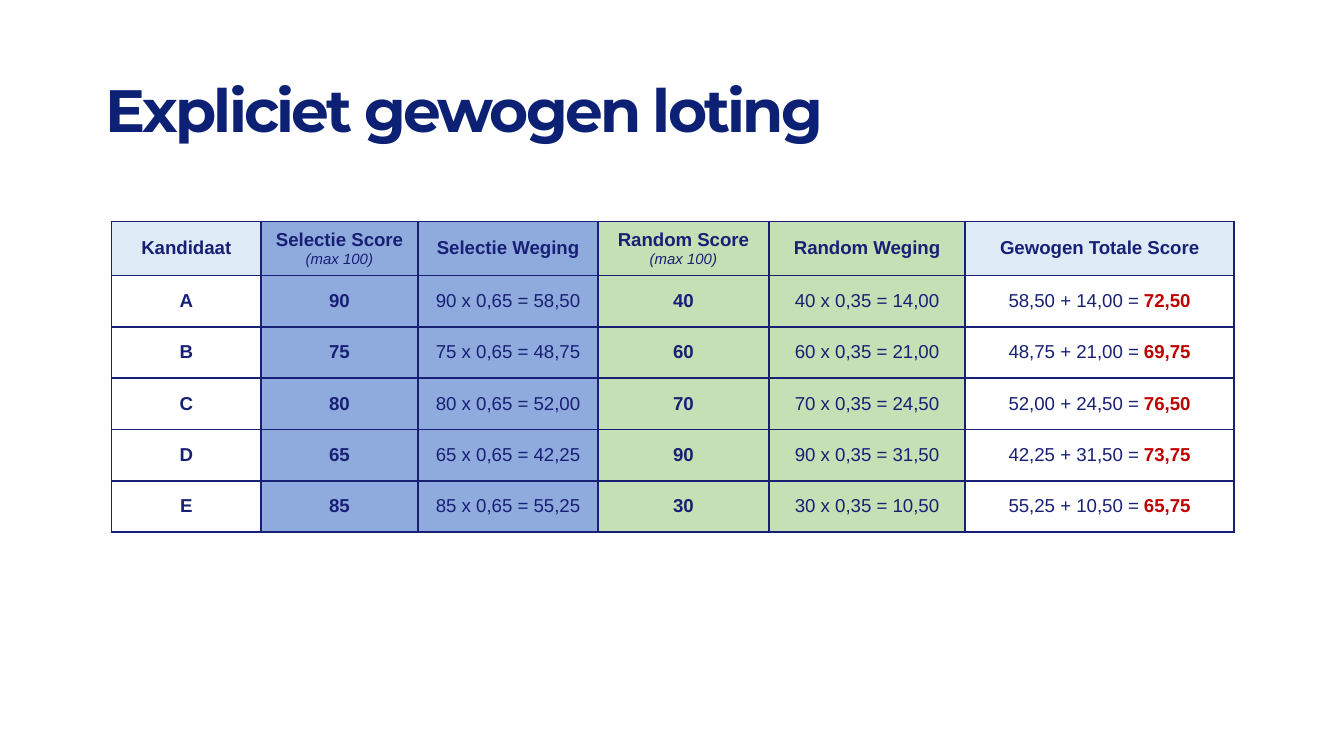
from lxml import etree
from pptx import Presentation
from pptx.dml.color import RGBColor
from pptx.enum.text import MSO_ANCHOR, PP_ALIGN
from pptx.oxml.ns import qn
from pptx.util import Cm, Pt

MIDDLE = MSO_ANCHOR.MIDDLE
CENTER = PP_ALIGN.CENTER

THEME = {
    "title": "0C2074", "ink": "182075", "total": "C00000",
    "pale": "DEEBF7", "blue": "8FAADC", "green": "C5E0B4", "white": "FFFFFF",
    "title_font": "Montserrat", "font": "Arial",
    "title_size": 32, "size": 10, "small": 8, "border": 1,
}


def style(run, size, color="ink", bold=False, italic=False, face="font"):
    font = run.font
    font.name = THEME[face]
    font.size = Pt(THEME[size])
    font.bold = bold
    font.italic = italic
    font.color.rgb = RGBColor.from_string(THEME[color])


def border(cell):
    """Draw the same line on all four sides; lines must come before the fill."""
    props = cell._tc.get_or_add_tcPr()
    for place, side in enumerate(("lnL", "lnR", "lnT", "lnB")):
        line = etree.Element(qn(f"a:{side}"), w=str(Pt(THEME["border"])))
        fill = etree.SubElement(line, qn("a:solidFill"))
        etree.SubElement(fill, qn("a:srgbClr"), val=THEME["ink"])
        props.insert(place, line)


prs = Presentation()
prs.slide_width = Cm(25.4)
prs.slide_height = Cm(14.29)
slide = prs.slides.add_slide(prs.slide_layouts[6])

# Title
box = slide.shapes.add_textbox(Cm(1.75), Cm(0.76), Cm(21.9), Cm(2.77))
frame = box.text_frame
frame.word_wrap = True
frame.vertical_anchor = MIDDLE
frame.text = "Expliciet gewogen loting"
head = frame.paragraphs[0]
head.line_spacing = 0.9
style(head.runs[0], "title_size", "title", bold=True, face="title_font")
head.runs[0].font._element.set("spc", "-150")

# Each cell is a list of (text, style) pieces
bold = {"size": "size", "bold": True}
plain = {"size": "size"}
note = ("(max 100)", {"size": "small", "italic": True})
total = {"size": "size", "color": "total", "bold": True}

rows = [[
    [("Kandidaat", bold)],
    [("Selectie Score ", bold), note],
    [("Selectie Weging", bold)],
    [("Random Score ", bold), note],
    [("Random Weging", bold)],
    [("Gewogen Totale Score", bold)],
]]
scores = [("A", 90, 40), ("B", 75, 60), ("C", 80, 70), ("D", 65, 90), ("E", 85, 30)]
for name, pick, luck in scores:
    parts = (pick * 65 / 100, luck * 35 / 100)
    left, right, both = (f"{n:.2f}".replace(".", ",") for n in (*parts, sum(parts)))
    rows.append([
        [(name, bold)],
        [(str(pick), bold)],
        [(f"{pick} x 0,65 = {left}", plain)],
        [(str(luck), bold)],
        [(f"{luck} x 0,35 = {right}", plain)],
        [(f"{left} + {right} = ", plain), (both, total)],
    ])

# Table
widths = [2.82, 2.97, 3.4, 3.23, 3.71, 5.08]
high = 0.97
fills = ["white", "blue", "blue", "green", "green", "white"]
shape = slide.shapes.add_table(len(rows), len(widths), Cm(2.11), Cm(4.19),
                               Cm(sum(widths)), Cm(high * len(rows)))
table = shape.table
for col, width in zip(table.columns, widths):
    col.width = Cm(width)

for r, row in enumerate(rows):
    table.rows[r].height = Cm(high)
    for c, pieces in enumerate(row):
        cell = table.cell(r, c)
        cell.vertical_anchor = MIDDLE
        tint = "pale" if r == 0 and fills[c] == "white" else fills[c]
        cell.fill.solid()
        cell.fill.fore_color.rgb = RGBColor.from_string(THEME[tint])
        border(cell)
        para = cell.text_frame.paragraphs[0]
        para.alignment = CENTER
        for text, look in pieces:
            run = para.add_run()
            run.text = text
            style(run, **look)

prs.save("out.pptx")
